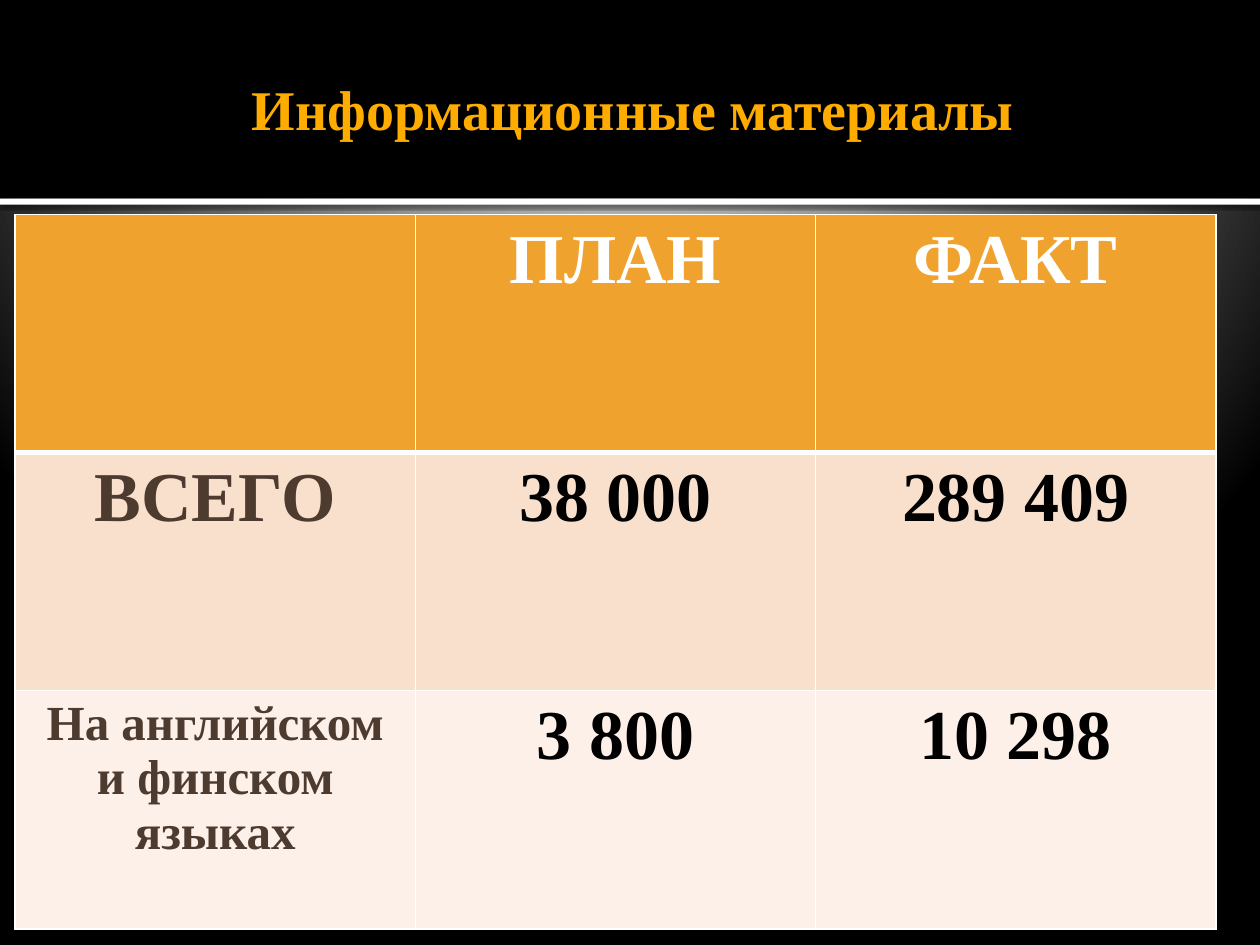
from dataclasses import dataclass

from lxml import etree
from pptx import Presentation
from pptx.dml.color import RGBColor
from pptx.enum.shapes import MSO_SHAPE
from pptx.enum.text import MSO_ANCHOR, PP_ALIGN
from pptx.oxml import parse_xml
from pptx.oxml.ns import nsdecls, qn
from pptx.util import Inches, Pt

RECT = MSO_SHAPE.RECTANGLE
MIDDLE = MSO_ANCHOR.MIDDLE
CENTER = PP_ALIGN.CENTER


@dataclass(frozen=True)
class Theme:
    font: str = "Times New Roman"
    black: str = "000000"
    white: str = "FFFFFF"
    gold: str = "FFAC00"
    brown: str = "4E3B30"
    row_fills: tuple = ("F0A22E", "F9E0CD", "FCF0E8")
    glow: tuple = ((0, "C0C0C0"), (12, "C0C0C0"), (20, "BEBEBE"), (100, "000000"))
    title_size: int = 32
    cell_size: int = 40
    label_size: int = 28
    thin: int = 1
    thick: int = 3


class Deck:
    """Holds the theme and current slide; boxes are shares of the slide's size."""

    def __init__(self, theme, width=10, height=7.5):
        self.theme = theme
        self.prs = Presentation()
        self.prs.slide_width, self.prs.slide_height = Inches(width), Inches(height)
        self.s = self.prs.slides.add_slide(self.prs.slide_layouts[6])

    def box(self, x, y, w, h):
        sw, sh = self.prs.slide_width, self.prs.slide_height
        return int(x * sw), int(y * sh), int(w * sw), int(h * sh)

    def background(self):
        """Circular glow that spreads from above the slide."""
        self.s.background.fill.solid()
        bg = self.s._element.find(".//" + qn("p:bgPr"))
        stops = "".join(
            f'<a:gs pos="{pos * 1000}"><a:srgbClr val="{color}"/></a:gs>'
            for pos, color in self.theme.glow)
        bg.replace(bg[0], parse_xml(
            f'<a:gradFill {nsdecls("a")} rotWithShape="1"><a:gsLst>{stops}</a:gsLst>'
            '<a:path path="circle"><a:fillToRect l="10000" t="-25000" r="10000" b="125000"/>'
            '</a:path></a:gradFill>'))

    def bar(self, share, color, shadow=False):
        sp = self.s.shapes.add_shape(RECT, *self.box(*share))
        sp.shadow.inherit = False
        sp.fill.solid()
        sp.fill.fore_color.rgb = RGBColor.from_string(color)
        sp.line.fill.background()
        if shadow:
            effects = sp._element.spPr.find(qn("a:effectLst"))
            effects.append(parse_xml(
                f'<a:outerShdw {nsdecls("a")} blurRad="{Pt(2.5)}" dist="{Pt(0.8)}" dir="5400000">'
                f'<a:srgbClr val="{self.theme.black}"><a:alpha val="60000"/></a:srgbClr>'
                '</a:outerShdw>'))

    def add_text(self, tf, text, size, color):
        tf.word_wrap = True
        p = tf.paragraphs[0]
        p.alignment = CENTER
        r = p.add_run()
        r.text = text
        r.font.name, r.font.size, r.font.bold = self.theme.font, Pt(size), True
        r.font.color.rgb = RGBColor.from_string(color)

    def title(self, share, text):
        tf = self.s.shapes.add_textbox(*self.box(*share)).text_frame
        tf.vertical_anchor = MIDDLE
        tf.margin_right = Inches(0.05)
        self.add_text(tf, text, self.theme.title_size, self.theme.gold)

    def borders(self, cell, top, bottom):
        tc_pr = cell._tc.get_or_add_tcPr()
        thin = self.theme.thin
        sides = (("L", thin), ("R", thin), ("T", top), ("B", bottom))
        for i, (side, width) in enumerate(sides):
            ln = etree.Element(qn(f"a:ln{side}"), w=str(Pt(width)))
            fill = etree.SubElement(ln, qn("a:solidFill"))
            etree.SubElement(fill, qn("a:srgbClr"), val=self.theme.white)
            tc_pr.insert(i, ln)

    def table(self, share, rows):
        t = self.theme
        x, y, w, h = self.box(*share)
        table = self.s.shapes.add_table(len(rows), len(rows[0]), x, y, w, h).table
        for i, row in enumerate(rows):
            for j, text in enumerate(row):
                cell = table.cell(i, j)
                cell.fill.solid()
                cell.fill.fore_color.rgb = RGBColor.from_string(t.row_fills[i])
                self.borders(cell, t.thick if i == 1 else t.thin,
                             t.thick if i == 0 else t.thin)
                if text:
                    color = t.white if i == 0 else t.brown if j == 0 else t.black
                    long_label = j == 0 and " " in text
                    self.add_text(cell.text_frame, text,
                                  t.label_size if long_label else t.cell_size, color)


def main():
    theme = Theme()
    deck = Deck(theme)
    header = 0.21
    deck.background()
    deck.bar((0, header, 1, 0.0067), theme.white, shadow=True)
    deck.bar((0, 0, 1, header), theme.black)
    deck.title((0.05, 0.023, 0.9, 0.183), "Информационные материалы")
    deck.table((0.012, 0.227, 0.953, 0.756), [
        ("", "ПЛАН", "ФАКТ"),
        ("ВСЕГО", "38 000", "289 409"),
        ("На английском и финском языках", "3 800", "10 298"),
    ])
    deck.prs.save("out.pptx")


if __name__ == "__main__":
    main()
